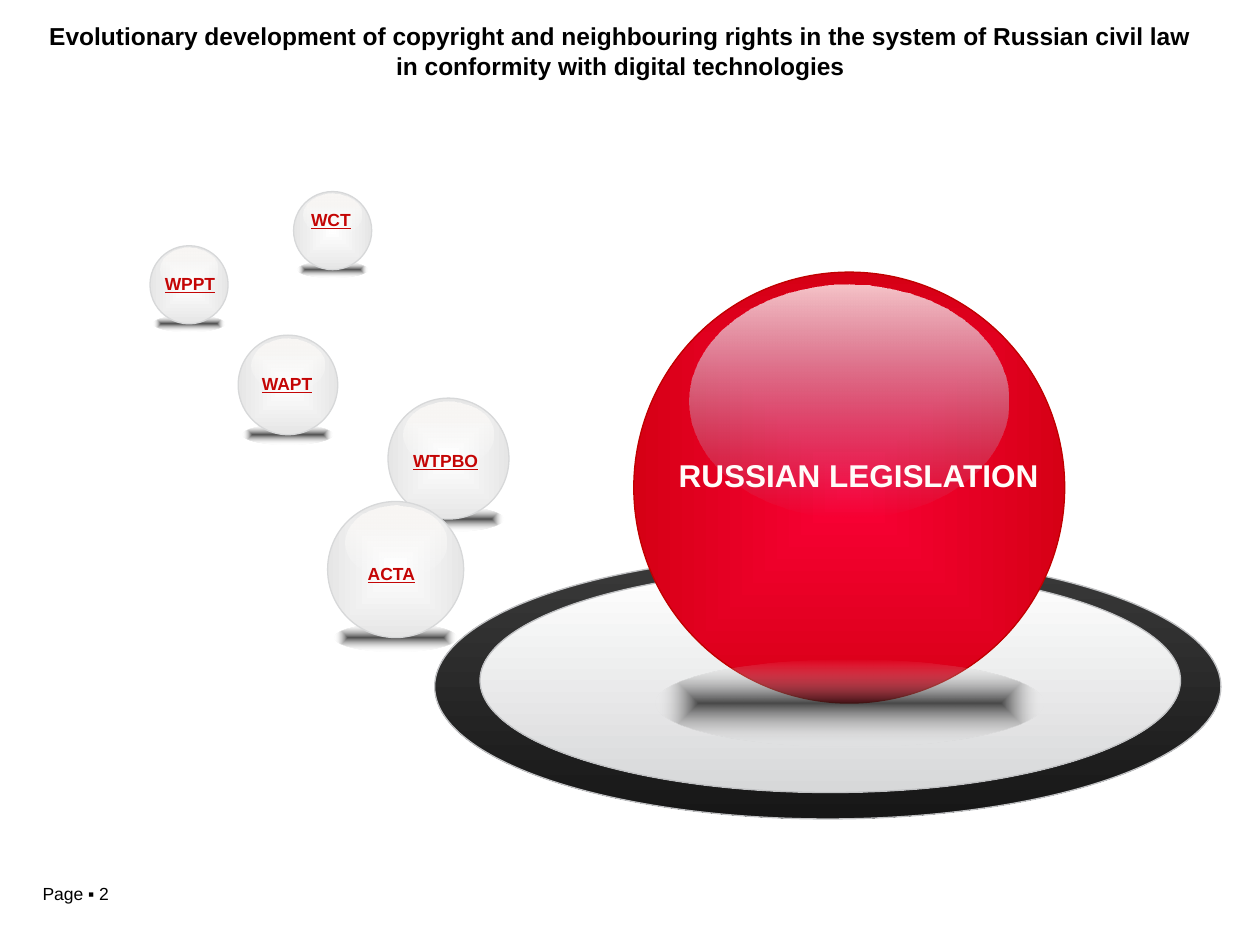
from pptx import Presentation
from pptx.dml.color import RGBColor as RGB
from pptx.enum.shapes import MSO_SHAPE as Shape
from pptx.enum.text import MSO_AUTO_SIZE as Fit, PP_ALIGN as Align
from pptx.oxml import parse_xml
from pptx.oxml.ns import nsdecls, qn
from pptx.util import Inches, Pt

HUES = {
    "black": "000000", "white": "FFFFFF", "cream": "FFFCF9",
    "ink": "171717", "coal": "3A3A3A", "mist": "E6E6E6",
    "rim": "D7D8D9", "edge": "C1C2C4", "sky": "8EB4E3",
    "hot": "FB0036", "red": "D60015", "ring": "C00000", "link": "C40505",
}
CENTRE = ('<a:path path="shape">'
          '<a:fillToRect l="50000" t="50000" r="50000" b="50000"/></a:path>')
DOWN = '<a:lin ang="5400000" scaled="0"/>'

# Left, top, width and height as shares of a ball's diameter
SHADE = (0.05, 0.9, 0.9, 0.2)
GLOSS = (0.13, 0.03, 0.74, 0.54)

# Ball left, top, diameter; then label text, left, top, width
BALLS = [
    (3.08, 3.16, 0.96, "WTPBO", 3.18, 3.52, 0.72),
    (1.89, 2.66, 0.79, "WAPT", 1.98, 2.91, 0.61),
    (2.6, 3.98, 1.08, "ACTA", 2.82, 4.42, 0.59),
    (2.33, 1.52, 0.62, "WCT", 2.37, 1.61, 0.52),
    (1.19, 1.95, 0.62, "WPPT", 1.21, 2.12, 0.6),
]


def blend(shape, stops, way):
    """Fill a shape with a gradient of (hue, opacity percent) stops."""
    last = len(stops) - 1
    marks = "".join(
        f'<a:gs pos="{100000 * i // last}"><a:srgbClr val="{HUES[hue]}">'
        f'<a:alpha val="{alpha * 1000}"/></a:srgbClr></a:gs>'
        for i, (hue, alpha) in enumerate(stops))
    shape.fill.gradient()
    old = shape.element.spPr.find(qn("a:gradFill"))
    new = parse_xml(f'<a:gradFill {nsdecls("a")} rotWithShape="1">'
                    f'<a:gsLst>{marks}</a:gsLst>{way}</a:gradFill>')
    old.getparent().replace(old, new)


def oval(group, box, stops, way, line=None):
    shape = group.shapes.add_shape(Shape.OVAL, *map(Inches, box))
    shape.shadow.inherit = False
    blend(shape, stops, way)
    if line:
        shape.line.color.rgb = RGB.from_string(HUES[line])
        shape.line.width = Pt(0.75)
    else:
        shape.line.fill.background()


def ball(slide, left, top, size, core, rim, line, gloss, front=False):
    """Draw a glossy ball, its shadow behind it or in front of it."""
    group = slide.shapes.add_group_shape()

    def part(share):
        x, y, w, h = (n * size for n in share)
        return left + x, top + y, w, h

    def shade():
        oval(group, part(SHADE), [("ink", 76), ("white", 0)], CENTRE)

    if not front:
        shade()
    oval(group, (left, top, size, size), [(core, 100), (rim, 100)],
         CENTRE, line)
    oval(group, part(GLOSS), gloss, DOWN)
    if front:
        shade()


def plate(slide):
    group = slide.shapes.add_group_shape()
    oval(group, (3.45, 4.4, 6.24, 2.1), [("coal", 100), ("ink", 100)],
         DOWN, "edge")
    oval(group, (3.81, 4.51, 5.56, 1.78), [("white", 100), ("rim", 100)],
         DOWN, "edge")


def label(slide, text, box, size, hue, bold=True, under=None,
          align=Align.LEFT, wrap=True):
    frame = slide.shapes.add_textbox(*map(Inches, box)).text_frame
    frame.word_wrap = wrap
    frame.auto_size = Fit.SHAPE_TO_FIT_TEXT
    frame.text = text
    para = frame.paragraphs[0]
    para.alignment = align
    font = para.runs[0].font
    font.name, font.size = "Arial", Pt(size)
    font.bold, font.underline = bold, under
    font.color.rgb = RGB.from_string(HUES[hue])


def main():
    deck = Presentation()
    deck.slide_width, deck.slide_height = Inches(10), Inches(7.5)
    slide = deck.slides.add_slide(deck.slide_layouts[6])

    label(slide, "Page ▪ 2", (0.24, 6.96, 1.47, 0.27), 10, "black",
          bold=False)
    label(slide, "Evolutionary development of copyright and neighbouring "
          "rights in the system of Russian civil law in conformity with "
          "digital technologies", (0.19, 0.12, 9.47, 0.57), 14, "black",
          align=Align.CENTER)

    pale = [("cream", 77), ("white", 0)]
    small = ("white", "mist", "rim", pale)
    ball(slide, *BALLS[0][:3], *small)
    ball(slide, *BALLS[1][:3], *small)
    plate(slide)
    ball(slide, 5.03, 2.16, 3.42, "hot", "red", "ring",
         [("white", 77), ("sky", 0)], front=True)
    for item in BALLS[2:]:
        ball(slide, *item[:3], *small)

    label(slide, "RUSSIAN LEGISLATION", (5.01, 3.57, 3.61, 0.4), 18,
          "cream", align=Align.CENTER)
    for *_, text, left, top, width in BALLS:
        label(slide, text, (left, top, width, 0.27), 10, "link",
              under=True, wrap=False)

    deck.save("out.pptx")


if __name__ == "__main__":
    main()
